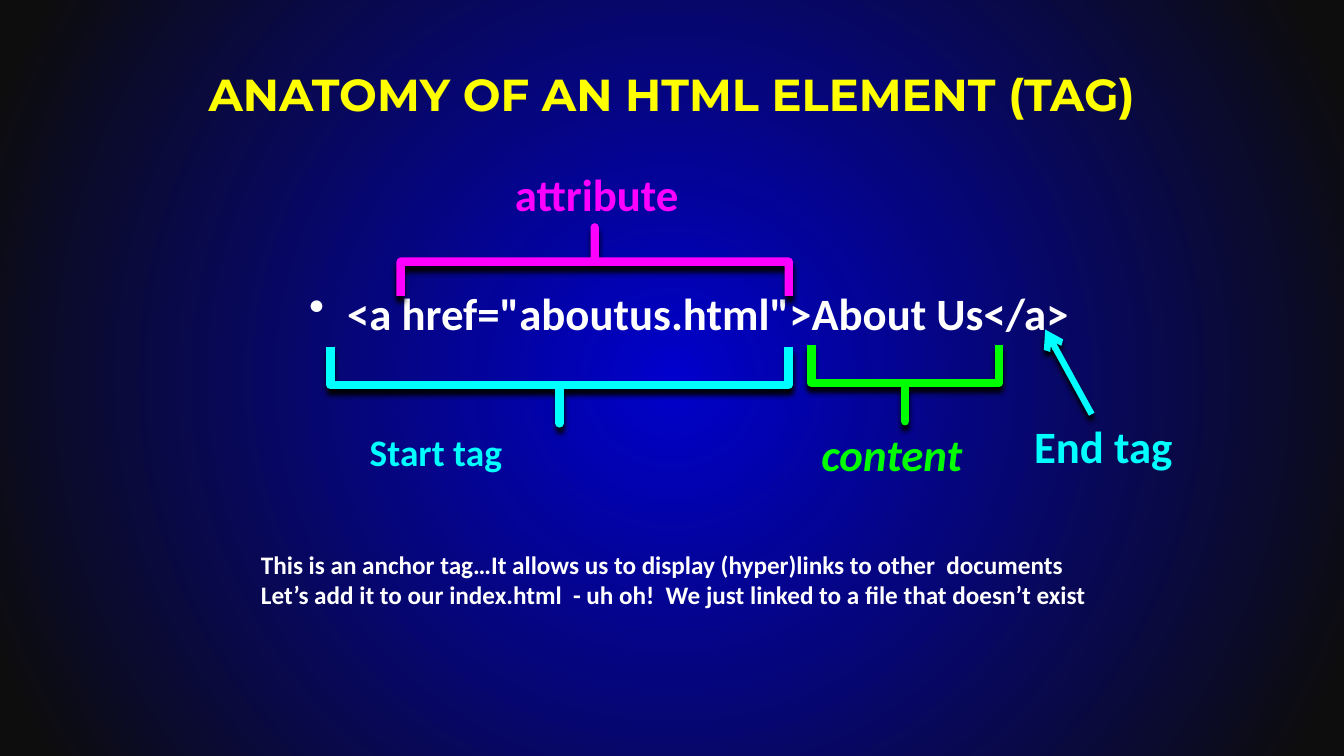
"""Build a slide that labels the parts of an HTML element."""
from dataclasses import dataclass

from pptx import Presentation
from pptx.dml.color import RGBColor
from pptx.enum.shapes import MSO_CONNECTOR, MSO_SHAPE
from pptx.enum.text import MSO_ANCHOR, MSO_AUTO_SIZE, PP_ALIGN
from pptx.oxml import parse_xml
from pptx.oxml.ns import nsdecls
from pptx.util import Pt

TITLE = "ANATOMY OF AN HTML ELEMENT (TAG)"
CODE = '<a href="aboutus.html">About Us</a>'
NOTES = [
    "This is an anchor tag…It allows us to display (hyper)links to other  documents",
    "Let’s add it to our index.html  - uh oh!  We just linked to a file that doesn’t exist",
]


@dataclass(frozen=True)
class Theme:
    heading: str = "Montserrat"
    body: str = "Calibri"
    large: float = 32
    medium: float = 26.7
    small: float = 18
    yellow: str = "FFFF00"
    white: str = "FFFFFF"
    cyan: str = "00FFFF"
    magenta: str = "FF00FF"
    green: str = "00FF00"
    glow: str = "0000CC"
    edge: str = "0D0D0D"
    shadow: str = "000000"
    brace_line: float = 6
    arrow_line: float = 4.5


THEME = Theme()

LABELS = [
    ("Start tag", (257, 303.1, 173.5, 39.6), THEME.medium, THEME.cyan, False),
    ("End tag", (731.5, 295.9, 167, 46.1), THEME.large, THEME.cyan, False),
    ("content", (579.6, 301, 135.4, 46.1), THEME.large, THEME.green, True),
    ("attribute", (360.7, 115.2, 162.7, 46.1), THEME.large, THEME.magenta, False),
]
BRACES = [
    ((236.2, 247.7, 326.9, 54.7), 270, THEME.cyan),
    ((286.2, 162.4, 277.2, 49), 90, THEME.magenta),
    ((579.6, 246.2, 133.9, 54.7), 270, THEME.green),
]
ARROW = (779.8, 295.9, 746.6, 235.4)


def color(value):
    return RGBColor.from_string(value)


def paint_background(slide):
    fill = slide.background.fill
    fill.gradient()
    for stop, position, value in zip(
        fill.gradient_stops, (0, 0.95), (THEME.glow, THEME.edge)
    ):
        stop.position = position
        stop.color.rgb = color(value)
    gradient = slide.element.xpath(".//p:bg//a:gradFill")[0]
    linear = gradient.xpath("./a:lin")[0]
    gradient.replace(linear, parse_xml(
        f'<a:path {nsdecls("a")} path="circle">'
        '<a:fillToRect l="50000" t="50000" r="50000" b="50000"/></a:path>'
    ))


def add_text(slide, area, lines, size, value, font=THEME.body, italic=False,
             align=PP_ALIGN.LEFT, anchor=MSO_ANCHOR.TOP, wrap=True, grow=False,
             bullet=False):
    box = slide.shapes.add_textbox(*map(Pt, area))
    frame = box.text_frame
    frame.word_wrap = wrap
    frame.vertical_anchor = anchor
    frame.auto_size = MSO_AUTO_SIZE.SHAPE_TO_FIT_TEXT if grow else MSO_AUTO_SIZE.NONE
    for index, line in enumerate(lines):
        para = frame.add_paragraph() if index else frame.paragraphs[0]
        para.alignment = align
        if bullet:
            properties = para._p.get_or_add_pPr()
            properties.set("marL", str(Pt(27)))
            properties.set("indent", str(-Pt(27)))
            properties.append(parse_xml(f'<a:buChar {nsdecls("a")} char="•"/>'))
        span = para.add_run()
        span.text = line
        span.font.name = font
        span.font.size = Pt(size)
        span.font.bold = True
        span.font.italic = italic
        span.font.color.rgb = color(value)


def style_line(shape, value, width):
    shape.line.color.rgb = color(value)
    shape.line.width = Pt(width)
    shape._element.spPr.append(parse_xml(
        f'<a:effectLst {nsdecls("a")}><a:outerShdw blurRad="{Pt(4)}" '
        f'dist="{Pt(4)}" dir="5400000" rotWithShape="0">'
        f'<a:srgbClr val="{THEME.shadow}"/></a:outerShdw></a:effectLst>'
    ))


def add_brace(slide, span_area, rotation, value):
    left, top, width, height = span_area
    turned = (left + (width - height) / 2, top + (height - width) / 2, height, width)
    brace = slide.shapes.add_shape(MSO_SHAPE.LEFT_BRACE, *map(Pt, turned))
    brace.rotation = rotation
    brace.adjustments[0] = 0
    brace.adjustments[1] = 0.5
    brace.fill.background()
    style_line(brace, value, THEME.brace_line)


def add_arrow(slide):
    arrow = slide.shapes.add_connector(MSO_CONNECTOR.STRAIGHT, *map(Pt, ARROW))
    style_line(arrow, THEME.cyan, THEME.arrow_line)
    arrow.line._get_or_add_ln().append(
        parse_xml(f'<a:tailEnd {nsdecls("a")} type="arrow"/>')
    )


def main():
    deck = Presentation()
    deck.slide_width, deck.slide_height = Pt(960), Pt(540)
    slide = deck.slides.add_slide(deck.slide_layouts[6])
    paint_background(slide)
    add_text(slide, (48, 21.6, 864, 90), [TITLE], THEME.large, THEME.yellow,
             font=THEME.heading, align=PP_ALIGN.CENTER, anchor=MSO_ANCHOR.MIDDLE)
    add_text(slide, (213.8, 200.2, 674.6, 339), [CODE], THEME.large, THEME.white,
             bullet=True)
    add_arrow(slide)
    for span_area, rotation, value in BRACES:
        add_brace(slide, span_area, rotation, value)
    for text, area, size, value, italic in LABELS:
        add_text(slide, area, [text], size, value, italic=italic, grow=True)
    add_text(slide, (179.3, 388.8, 609.1, 51.1), NOTES, THEME.small, THEME.white,
             wrap=False, grow=True)
    deck.save("out.pptx")


if __name__ == "__main__":
    main()
